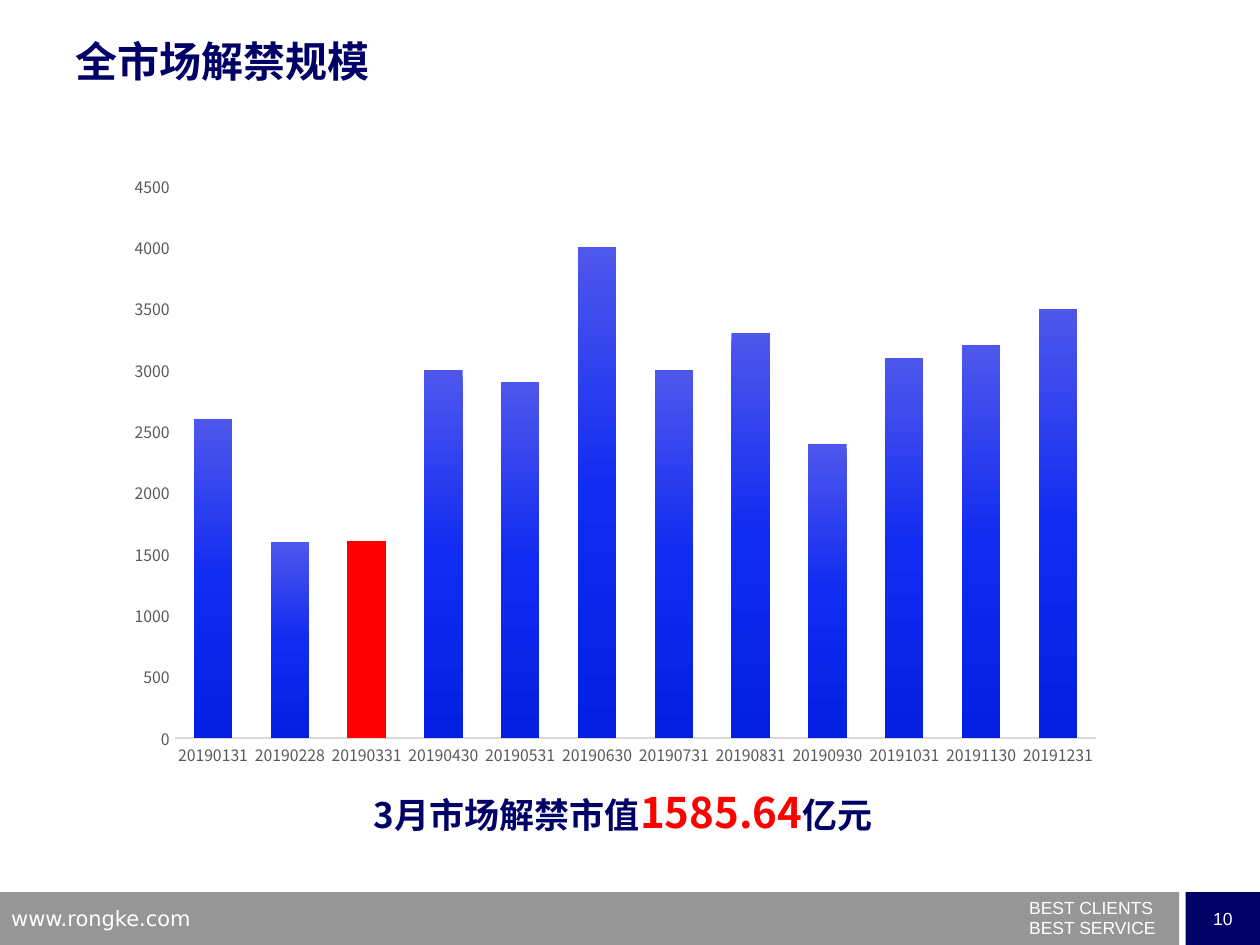
from dataclasses import dataclass

from lxml import etree
from pptx import Presentation
from pptx.chart.data import CategoryChartData
from pptx.dml.color import RGBColor
from pptx.enum import chart as ch, shapes, text
from pptx.oxml import parse_xml
from pptx.oxml.ns import nsdecls, qn
from pptx import util as u


@dataclass(frozen=True)
class Theme:
    """Colours, fonts and type sizes of the slide."""
    navy: str = "000066"
    red: str = "FF0000"
    grey: str = "969696"
    white: str = "FFFFFF"
    label: str = "595959"
    axis: str = "D9D9D9"
    bar: tuple = ((0, "4E57EC"), (50, "112BF1"), (100, "041EE2"))
    cjk: str = "Noto Sans CJK SC"
    sans: str = "Arial"
    web: str = "DejaVu Sans"
    title: int = 24
    body: int = 20
    url: int = 12
    small: int = 10
    tick: int = 9


@dataclass(frozen=True)
class Box:
    """A rectangle in inches."""
    x: float
    y: float
    w: float
    h: float

    def share(self, x, y, w, h):
        """Return the inner box given in percent of this one."""
        return Box(self.x + self.w * x / 100, self.y + self.h * y / 100,
                   self.w * w / 100, self.h * h / 100)

    def emu(self):
        """Return left, top, width and height as lengths."""
        return [u.Inches(v) for v in (self.x, self.y, self.w, self.h)]


T = Theme()
SLIDE = Box(0, 0, 10, 7.5)
DATES = ["20190131", "20190228", "20190331", "20190430", "20190531", "20190630",
         "20190731", "20190831", "20190930", "20191031", "20191130", "20191231"]
VALUES = [2600, 1600, 1600, 3000, 2900, 4000, 3000, 3300, 2400, 3100, 3200, 3500]
MARCH = 2


def rgb(code):
    """Turn a hex code into a colour."""
    return RGBColor.from_string(code)


def add_run(p, words, size, color, face, bold=False):
    """Append one styled run to a paragraph."""
    r = p.add_run()
    r.text = words
    r.font.size, r.font.bold, r.font.name = u.Pt(size), bold, face
    r.font.color.rgb = rgb(color)
    if face == T.cjk:
        etree.SubElement(r._r.get_or_add_rPr(), qn("a:ea"), typeface=face)


def add_text(s, box):
    """Add a wrapping text box and return its frame."""
    tf = s.shapes.add_textbox(*box.emu()).text_frame
    tf.word_wrap = True
    return tf


def add_bar(s, box, color):
    """Add a plain filled rectangle."""
    sp = s.shapes.add_shape(shapes.MSO_SHAPE.RECTANGLE, *box.emu())
    sp.shadow.inherit = False
    sp.fill.solid()
    sp.fill.fore_color.rgb = rgb(color)
    sp.line.fill.background()
    return sp


def add_footer(s, box):
    """Draw the footer band with address, motto and page number."""
    add_bar(s, box.share(0, 0, 93.6, 100), T.grey)
    tf = add_bar(s, box.share(94.1, 0, 5.9, 100), T.navy).text_frame
    tf.word_wrap = False
    tf.vertical_anchor = text.MSO_ANCHOR.MIDDLE
    p = tf.paragraphs[0]
    p.alignment = text.PP_ALIGN.CENTER
    add_run(p, "10", T.small, T.white, T.sans)

    tf = add_text(s, box.share(80.7, 14.3, 19.2, 83.3))
    for i, words in enumerate(("BEST CLIENTS", "BEST SERVICE")):
        p = tf.add_paragraph() if i else tf.paragraphs[0]
        p.line_spacing = 0.5
        if i:
            p.space_before = u.Pt(5.7)
        add_run(p, words, T.small, T.white, T.sans)

    p = add_text(s, box.share(-0.1, 14.3, 24.1, 61.9)).paragraphs[0]
    add_run(p, "www.rongke.com", T.url, T.white, T.web)


def add_title(s, box):
    """Write the slide title."""
    p = add_text(s, box).paragraphs[0]
    add_run(p, "全市场解禁规模", T.title, T.navy, T.cjk, True)


def add_caption(s, box):
    """Write the sentence that gives the March figure."""
    p = add_text(s, box).paragraphs[0]
    for words, size, color in (("3月市场解禁市值", T.body, T.navy),
                               ("1585.64", T.title, T.red),
                               ("亿元", T.body, T.navy)):
        add_run(p, words, size, color, T.cjk, True)


def fill_gradient(series, stops):
    """Give a series a vertical gradient."""
    gs = "".join(f'<a:gs pos="{pos * 1000}"><a:srgbClr val="{c}"/></a:gs>'
                 for pos, c in stops)
    series.format.fill.background()
    old = series._element.find(qn("c:spPr")).find(qn("a:noFill"))
    old.getparent().replace(old, parse_xml(
        f'<a:gradFill {nsdecls("a")} rotWithShape="1"><a:gsLst>{gs}</a:gsLst>'
        '<a:lin ang="5400000" scaled="0"/></a:gradFill>'))


def style_axis(axis):
    """Strip ticks and gridlines and set the label type."""
    axis.has_major_gridlines = False
    axis.major_tick_mark = axis.minor_tick_mark = ch.XL_TICK_MARK.NONE
    font = axis.tick_labels.font
    font.size, font.name = u.Pt(T.tick), T.cjk
    font.color.rgb = rgb(T.label)


def add_columns(s, box):
    """Draw the monthly column chart with March picked out."""
    data = CategoryChartData(number_format="General")
    data.categories = DATES
    data.add_series("Series 1", VALUES)
    chart = s.shapes.add_chart(ch.XL_CHART_TYPE.COLUMN_CLUSTERED,
                               *box.emu(), data).chart
    chart.has_legend = chart.has_title = False
    chart.font.size, chart.font.name = u.Pt(T.small), T.cjk
    for axis in (chart.category_axis, chart.value_axis):
        style_axis(axis)
    line = chart.category_axis.format.line
    line.color.rgb, line.width = rgb(T.axis), u.Pt(1)
    axis = chart.value_axis
    axis.format.line.fill.background()
    axis.minimum_scale, axis.maximum_scale, axis.major_unit = 0, 4500, 500

    plot = chart.plots[0]
    plot.gap_width, plot.overlap, plot.vary_by_categories = 100, -24, False
    series = plot.series[0]
    fill_gradient(series, T.bar)
    march = series.points[MARCH].format
    march.fill.solid()
    march.fill.fore_color.rgb = rgb(T.red)
    march.line.color.rgb = rgb(T.red)


def main():
    """Build the slide and save it."""
    prs = Presentation()
    prs.slide_width, prs.slide_height = SLIDE.emu()[2:]
    s = prs.slides.add_slide(prs.slide_layouts[6])
    add_footer(s, SLIDE.share(0, 94.4, 100, 5.6))
    add_title(s, SLIDE.share(5, 3.07, 90, 16.67))
    add_caption(s, SLIDE.share(28.7, 82.53, 47.4, 6.67))
    add_columns(s, SLIDE.share(9.1, 17.2, 79.5, 65.07))
    prs.save("out.pptx")


if __name__ == "__main__":
    main()
